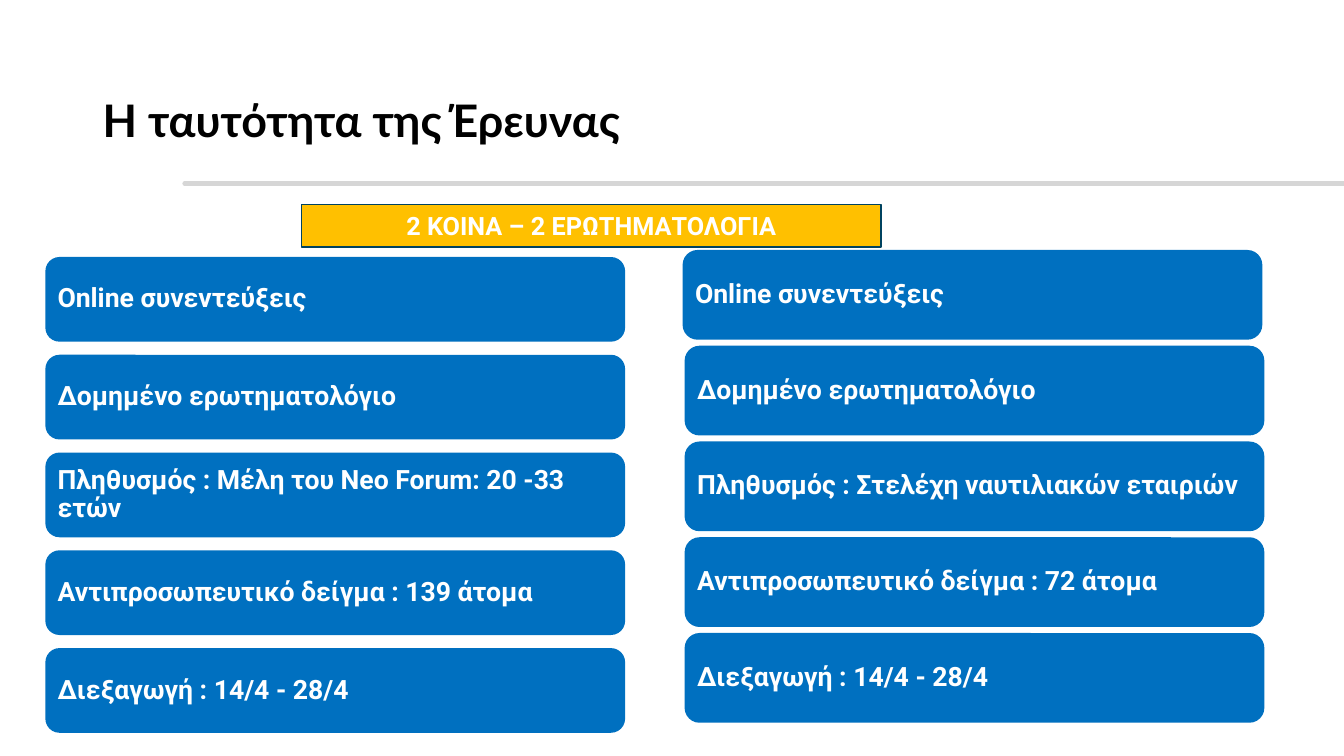
from lxml.etree import SubElement
from pptx import Presentation
from pptx.dml.color import RGBColor
from pptx.enum.shapes import MSO_CONNECTOR, MSO_SHAPE
from pptx.enum.text import MSO_ANCHOR, PP_ALIGN
from pptx.oxml.ns import qn
from pptx.util import Inches, Pt

THEME = {
    "title": {"font": "Lato", "size": 32, "color": "000000"},
    "banner": {"font": "Roboto", "size": 18, "color": "FFFFFF"},
    "card": {"font": "Roboto", "size": 19, "color": "FFFFFF"},
    "card_fill": "0070C0",
    "banner_fill": "FFC000",
    "banner_line": "004360",
    "rule": "D6D6D6",
}
CARD_WIDTH = 5.75


def write(shape, text, style, spacing=0.9, align=PP_ALIGN.LEFT):
    frame = shape.text_frame
    frame.word_wrap = True
    frame.vertical_anchor = MSO_ANCHOR.MIDDLE
    paragraph = frame.paragraphs[0]
    paragraph.alignment = align
    paragraph.line_spacing = spacing
    run = paragraph.add_run()
    run.text = text
    run.font.name = THEME[style]["font"]
    run.font.size = Pt(THEME[style]["size"])
    run.font.bold = True
    run.font.color.rgb = RGBColor.from_string(THEME[style]["color"])


def add_box(kind, left, top, width, height, fill):
    shape = slide.shapes.add_shape(
        kind, Inches(left), Inches(top), Inches(width), Inches(height))
    shape.shadow.inherit = False
    shape.fill.solid()
    shape.fill.fore_color.rgb = RGBColor.from_string(THEME[fill])
    shape.line.fill.background()
    return shape


presentation = Presentation()
presentation.slide_width = Inches(13.33)
presentation.slide_height = Inches(7.5)
slide = presentation.slides.add_slide(presentation.slide_layouts[6])

rule = slide.shapes.add_connector(
    MSO_CONNECTOR.STRAIGHT, Inches(1.83), Inches(1.82),
    presentation.slide_width, Inches(1.82))
rule.line.color.rgb = RGBColor.from_string(THEME["rule"])
rule.line.width = Pt(3)
rule_properties = rule._element.spPr
rule_properties.find(qn("a:ln")).set("cap", "rnd")
SubElement(rule_properties, qn("a:effectLst"))

title = slide.shapes.add_textbox(
    Inches(0.92), Inches(0.49), Inches(9.37), Inches(1.45))
write(title, "H ταυτότητα της Έρευνας", "title")

columns = [
    {"lefts": [0.45] * 5, "top": 2.55, "height": 0.84, "pitch": 0.97,
     "population": "Μέλη του Neo Forum: 20 -33 ετών", "sample": 139},
    {"lefts": [6.77] + [6.79] * 4, "top": 2.48, "height": 0.89, "pitch": 0.95,
     "population": "Στελέχη ναυτιλιακών εταιριών", "sample": 72},
]
for column in columns:
    facts = [
        "Online συνεντεύξεις",
        "Δομημένο ερωτηματολόγιο",
        f"Πληθυσμός : {column['population']}",
        f"Αντιπροσωπευτικό δείγμα : {column['sample']} άτομα",
        "Διεξαγωγή : 14/4 - 28/4",
    ]
    for row, (left, fact) in enumerate(zip(column["lefts"], facts)):
        card = add_box(
            MSO_SHAPE.ROUNDED_RECTANGLE, left,
            column["top"] + row * column["pitch"],
            CARD_WIDTH, column["height"], "card_fill")
        frame = card.text_frame
        frame.margin_left = frame.margin_right = Inches(0.08)
        frame.margin_top = frame.margin_bottom = Inches(0.08)
        write(card, fact, "card")

banner = add_box(MSO_SHAPE.RECTANGLE, 2.99, 2.03, CARD_WIDTH, 0.42, "banner_fill")
banner.line.color.rgb = RGBColor.from_string(THEME["banner_line"])
banner.line.width = Pt(1)
write(banner, "2 ΚΟΙΝΑ – 2 ΕΡΩΤΗΜΑΤΟΛΟΓΙΑ", "banner", 1.0, PP_ALIGN.CENTER)

presentation.save("out.pptx")
